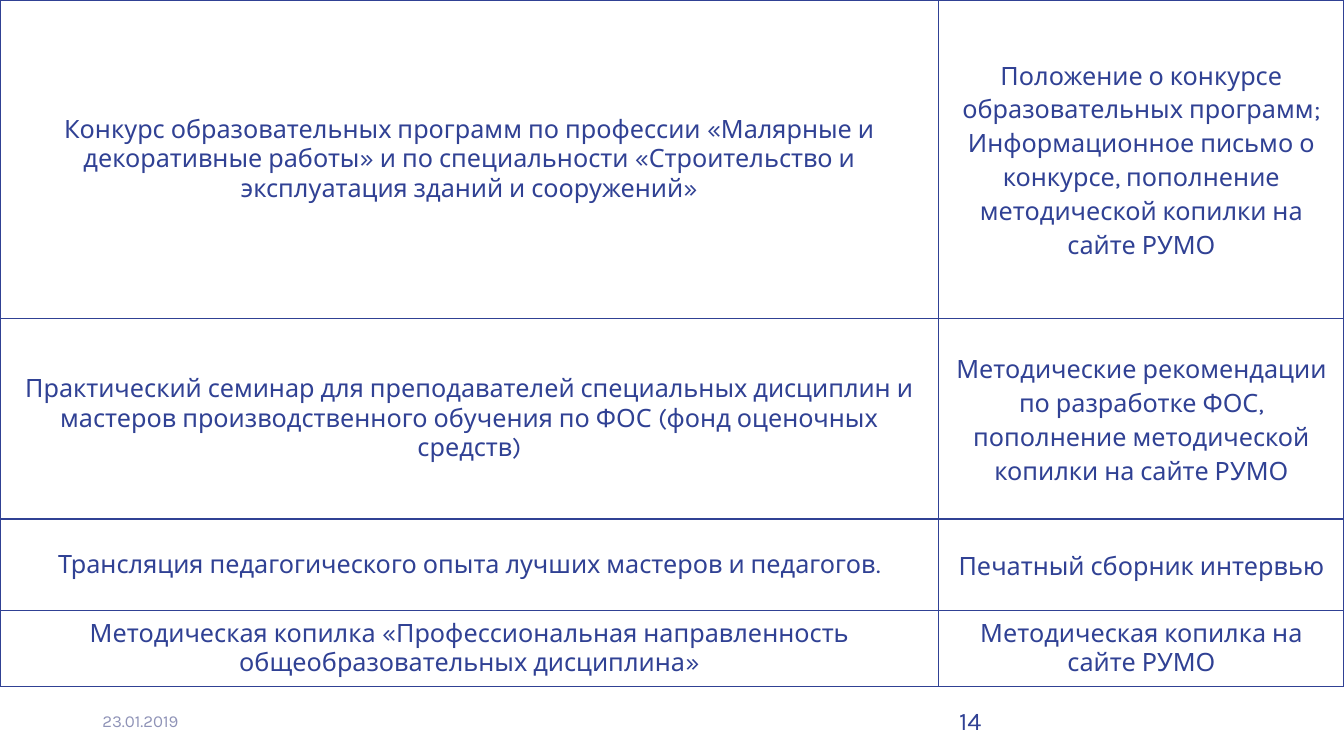
from lxml import etree
from pptx import Presentation
from pptx.dml.color import RGBColor
from pptx.enum.text import MSO_ANCHOR, PP_ALIGN
from pptx.oxml.ns import qn
from pptx.util import Cm, Pt

CENTER = PP_ALIGN.CENTER
TOP, MIDDLE = MSO_ANCHOR.TOP, MSO_ANCHOR.MIDDLE
COLORS = {"navy": "304194", "muted": "8F93B7"}
FONT = "Karla"
COLUMN_WIDTHS = [23.66, 10.21]
ROW_HEIGHTS = [8.03, 5.05, 2.31, 1.9]

# Each row: activity, paragraphs of its result, line spacing of the result
ROWS = [
    ("Конкурс образовательных программ по профессии «Малярные и декоративные работы» "
     "и по специальности «Строительство и эксплуатация зданий и сооружений»",
     ["Положение о конкурсе образовательных программ;",
      "Информационное письмо о конкурсе, пополнение методической копилки на сайте РУМО"],
     1.15),
    ("Практический семинар для преподавателей специальных дисциплин и мастеров "
     "производственного обучения по ФОС (фонд оценочных средств)",
     ["Методические рекомендации по разработке ФОС, "
      "пополнение методической копилки на сайте РУМО"],
     1.15),
    ("Трансляция педагогического опыта лучших мастеров и педагогов.",
     ["Печатный сборник интервью"],
     1.15),
    ("Методическая копилка «Профессиональная направленность "
     "общеобразовательных дисциплина»",
     ["Методическая копилка на сайте РУМО"],
     1.0),
]


def write(paragraph, text, size, color):
    span = paragraph.add_run()
    span.text = text
    span.font.name = FONT
    span.font.size = Pt(size)
    span.font.color.rgb = RGBColor.from_string(COLORS[color])


def add_borders(cell):
    properties = cell._tc.get_or_add_tcPr()
    for side in ("a:lnL", "a:lnR", "a:lnT", "a:lnB"):
        line = etree.SubElement(properties, qn(side), w=str(Pt(1)))
        fill = etree.SubElement(line, qn("a:solidFill"))
        etree.SubElement(fill, qn("a:srgbClr"), val=COLORS["navy"])


deck = Presentation()
deck.slide_width, deck.slide_height = Cm(33.87), Cm(19.05)
page = deck.slides.add_slide(deck.slide_layouts[6])

# Date and page number
for text, left, size, color, anchor in [
    ("23.01.2019", 2.33, 12, "muted", MIDDLE),
    ("14", 23.92, 18, "navy", TOP),
]:
    box = page.shapes.add_textbox(Cm(left), Cm(17.66), Cm(7.62), Cm(1.01))
    box.text_frame.word_wrap = True
    box.text_frame.vertical_anchor = anchor
    write(box.text_frame.paragraphs[0], text, size, color)

# Table of activities and results
table = page.shapes.add_table(
    len(ROWS), len(COLUMN_WIDTHS), Cm(0), Cm(0),
    Cm(sum(COLUMN_WIDTHS)), Cm(sum(ROW_HEIGHTS))).table
table.first_row = table.horz_banding = False
for column, width in zip(table.columns, COLUMN_WIDTHS):
    column.width = Cm(width)
for row, height in zip(table.rows, ROW_HEIGHTS):
    row.height = Cm(height)

cell_format = {
    "margin_left": Cm(0.18), "margin_right": Cm(0.18),
    "margin_top": 0, "margin_bottom": 0, "vertical_anchor": MIDDLE,
}
for row, (activity, results, spacing) in zip(table.rows, ROWS):
    contents = [([activity], 1.0), (results, spacing)]
    for cell, (texts, line_spacing) in zip(row.cells, contents):
        for name, value in cell_format.items():
            setattr(cell, name, value)
        add_borders(cell)
        cell.fill.background()
        frame = cell.text_frame
        for index, text in enumerate(texts):
            paragraph = frame.add_paragraph() if index else frame.paragraphs[0]
            paragraph.alignment = CENTER
            paragraph.line_spacing = line_spacing
            write(paragraph, text, 18, "navy")

deck.save("out.pptx")
